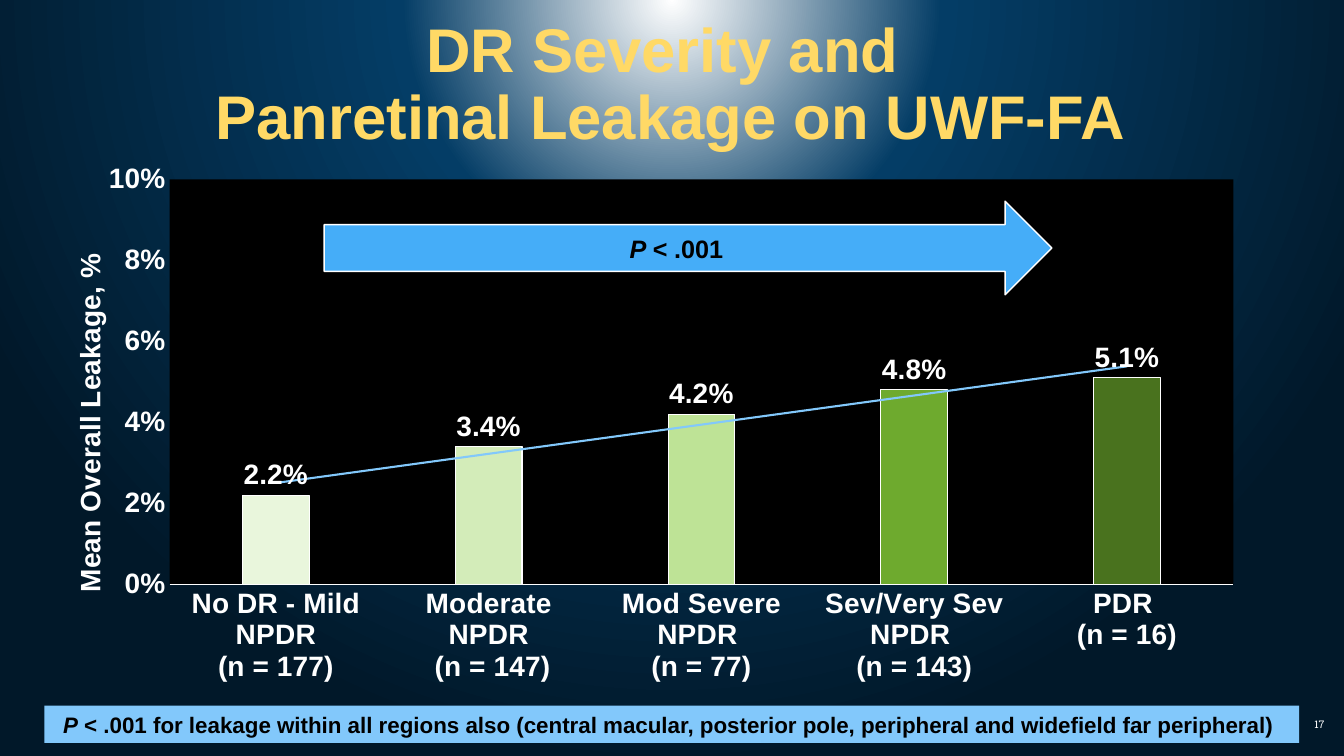
from lxml import etree
from pptx import Presentation
from pptx.chart.data import CategoryChartData
from pptx.dml.color import RGBColor
from pptx.enum.chart import XL_CHART_TYPE, XL_LABEL_POSITION, XL_TICK_MARK
from pptx.enum.shapes import MSO_SHAPE
from pptx.enum.text import MSO_ANCHOR, PP_ALIGN
from pptx.oxml import parse_xml
from pptx.oxml.ns import nsdecls, qn
from pptx.util import Cm, Pt

COLUMNS = XL_CHART_TYPE.COLUMN_CLUSTERED
OUTSIDE_END = XL_LABEL_POSITION.OUTSIDE_END
NO_TICKS = XL_TICK_MARK.NONE
RIGHT_ARROW = MSO_SHAPE.RIGHT_ARROW
RECTANGLE = MSO_SHAPE.RECTANGLE
MIDDLE = MSO_ANCHOR.MIDDLE
CENTER = PP_ALIGN.CENTER
RIGHT = PP_ALIGN.RIGHT

COLORS = {
    "white": "FFFFFF", "black": "000000", "title": "FFD966",
    "glow": "043D66", "night": "011829", "arrow": "45ADF8", "sky": "82C8FB",
}
LEAKAGE = [  # category, mean leakage, bar colour
    ("No DR - Mild NPDR\n(n = 177)", 0.022, "E9F6DC"),
    ("Moderate NPDR\n (n = 147)", 0.034, "D3ECB9"),
    ("Mod Severe NPDR \n(n = 77)", 0.042, "BEE396"),
    ("Sev/Very Sev NPDR \n(n = 143)", 0.048, "6EAA2E"),
    ("PDR \n(n = 16)", 0.051, "49721E"),
]


def rgb(name):
    return RGBColor.from_string(COLORS.get(name, name))


class SlideBuilder:
    """Holds the text style and the current page; lengths are centimetres."""

    def __init__(self, page, font="Arial"):
        self.page = page
        self.font = font

    def background(self, stops):
        """Fill the page with a circular gradient of (percent, colour) stops."""
        self.page.background.fill.gradient()
        gradient = next(self.page._element.iter(qn("a:gradFill")))
        for child in list(gradient):
            gradient.remove(child)
        stop_list = etree.SubElement(gradient, qn("a:gsLst"))
        for percent, color in stops:
            stop = etree.SubElement(stop_list, qn("a:gs"), pos=str(percent * 1000))
            etree.SubElement(stop, qn("a:srgbClr"), val=COLORS[color])
        circle = etree.SubElement(gradient, qn("a:path"), path="circle")
        etree.SubElement(circle, qn("a:fillToRect"),
                         l="50000", t="-80000", r="50000", b="180000")

    def style(self, font, size, color, bold=True, name=None):
        font.name = name or self.font
        font.size = Pt(size)
        font.bold = bold
        font.color.rgb = rgb(color)

    def fill_frame(self, frame, lines, size, color, align=CENTER, wrap=True, **look):
        """Fill a frame with one paragraph; each line is a list of (text, italic)."""
        frame.word_wrap = wrap
        frame.vertical_anchor = MIDDLE
        para = frame.paragraphs[0]
        para.alignment = align
        for number, line in enumerate(lines):
            if number:
                para.add_line_break()
            for text, italic in line:
                span = para.add_run()
                span.text = text
                self.style(span.font, size, color, **look)
                span.font.italic = italic
        return para

    def text(self, place, lines, size, color, **look):
        box = self.page.shapes.add_textbox(*map(Cm, place))
        return self.fill_frame(box.text_frame, lines, size, color, **look)

    def shape(self, kind, place, fill, lines, size, outline=None, wrap=True):
        shape = self.page.shapes.add_shape(kind, *map(Cm, place))
        shape.shadow.inherit = False
        shape.fill.solid()
        shape.fill.fore_color.rgb = rgb(fill)
        if outline:
            shape.line.color.rgb = rgb(outline)
            shape.line.width = Pt(1)
        else:
            shape.line.fill.background()
        self.fill_frame(shape.text_frame, lines, size, "black", wrap=wrap)

    def bar_chart(self, place, rows, axis_title):
        data = CategoryChartData(number_format="0.0%")
        data.categories = [category for category, _, _ in rows]
        data.add_series("Series 1", [value for _, value, _ in rows])
        chart = self.page.shapes.add_chart(COLUMNS, *map(Cm, place), data).chart
        chart.has_legend = False
        chart.has_title = False
        self.style(chart.font, 20, "white")

        for axis in (chart.category_axis, chart.value_axis):
            axis.major_tick_mark = axis.minor_tick_mark = NO_TICKS
            axis.has_major_gridlines = False
            self.style(axis.tick_labels.font, 20, "white")
        self.outline(chart.category_axis.format.line)
        scale = chart.value_axis
        scale.format.line.fill.background()
        scale.minimum_scale, scale.maximum_scale, scale.major_unit = 0, 0.1, 0.02
        scale.tick_labels.number_format = "0%"
        scale.tick_labels.number_format_is_linked = False
        span = scale.axis_title.text_frame.paragraphs[0].add_run()
        span.text = axis_title
        self.style(span.font, 20, "white")

        plot = chart.plots[0]
        plot.gap_width, plot.overlap = 219, -27
        plot.vary_by_categories = False
        series = plot.series[0]
        for part, color in [(series, rows[0][2])] + [
                (series.points[index], row[2]) for index, row in enumerate(rows)]:
            part.format.fill.solid()
            part.format.fill.fore_color.rgb = rgb(color)
            self.outline(part.format.line)
        labels = series.data_labels
        labels.show_value = True
        labels.position = OUTSIDE_END
        labels.number_format = "0.0%"
        labels.number_format_is_linked = False
        self.style(labels.font, 20, "white")
        self.trend_line(series, "sky")
        self.plot_area(chart, (0.087, 0.037, 0.9, 0.744), "black")

    def outline(self, line):
        line.color.rgb = rgb("white")
        line.width = Pt(0.75)

    def trend_line(self, series, color):
        trend = parse_xml(
            f'<c:trendline {nsdecls("c", "a")}><c:spPr><a:ln w="{Pt(1.5)}" cap="rnd">'
            f'<a:solidFill><a:srgbClr val="{COLORS[color]}"/></a:solidFill></a:ln></c:spPr>'
            '<c:trendlineType val="linear"/><c:dispRSqr val="0"/><c:dispEq val="0"/>'
            '</c:trendline>')
        series._element.find(qn("c:cat")).addprevious(trend)

    def plot_area(self, chart, fractions, fill):
        """Place the inner plot area by fractions of the chart and fill it."""
        area = next(chart._chartSpace.iter(qn("c:plotArea")))
        for layout in area.findall(qn("c:layout")):
            area.remove(layout)
        sizes = "".join(f'<c:{key} val="{value}"/>'
                        for key, value in zip("xywh", fractions))
        area.insert(0, parse_xml(
            f'<c:layout {nsdecls("c")}><c:manualLayout><c:layoutTarget val="inner"/>'
            f'<c:xMode val="edge"/><c:yMode val="edge"/>{sizes}'
            '</c:manualLayout></c:layout>'))
        area.append(parse_xml(
            f'<c:spPr {nsdecls("c", "a")}><a:solidFill>'
            f'<a:srgbClr val="{COLORS[fill]}"/></a:solidFill></c:spPr>'))


def main():
    deck = Presentation()
    deck.slide_width, deck.slide_height = Cm(33.87), Cm(19.05)
    builder = SlideBuilder(deck.slides.add_slide(deck.slide_layouts[6]))
    builder.background([(0, "white"), (35, "glow"), (100, "night")])
    title = builder.text(
        (2.54, 0.33, 28.75, 3.68),
        [[("DR Severity and ", False)], [("Panretinal Leakage on UWF-FA", False)]],
        44, "title")
    title.line_spacing = 0.9
    builder.bar_chart((1.68, 4.01, 29.79, 13.72), LEAKAGE, "Mean Overall Leakage, %")
    builder.text((31.55, 17.73, 2.08, 1.02), [[("17", False)]], 7.5, "white",
                 align=RIGHT, bold=False, name="Roboto Slab")
    builder.shape(RIGHT_ARROW, (8.17, 5.07, 18.34, 2.36), "arrow",
                  [[("P <", True), (" .001", False)]], 18, outline="white")
    builder.shape(
        RECTANGLE, (1.12, 17.78, 31.62, 0.94), "sky",
        [[("P", True), (" < .001 for leakage within all regions also (central macular, "
                        "posterior pole, peripheral and widefield far peripheral) ", False)]],
        16, wrap=False)
    deck.save("out.pptx")


if __name__ == "__main__":
    main()
